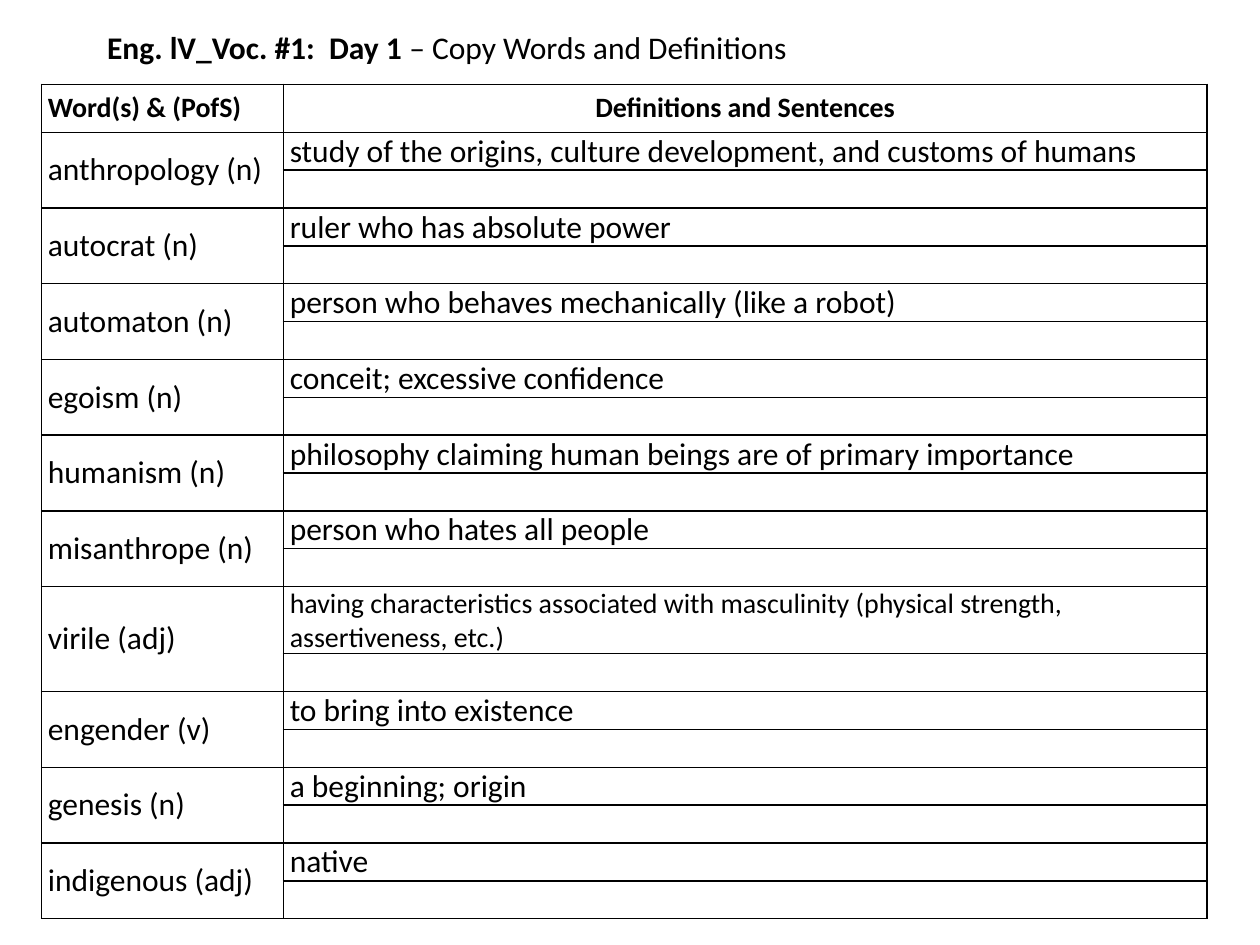
from lxml import etree
from pptx import Presentation, util as u
from pptx.dml.color import RGBColor
from pptx.enum import text
from pptx.oxml import ns

COLORS = {"ink": "000000"}
FONT = "Calibri"
WIDTH, HEIGHT = u.Inches(10), u.Inches(7.5)
HEADINGS = ("Word(s) & (PofS)", "Definitions and Sentences")
VOCABULARY = [
    ("anthropology (n)", "study of the origins, culture development, and customs of humans", 18),
    ("autocrat (n)", "ruler who has absolute power", 18),
    ("automaton (n)", "person who behaves mechanically (like a robot)", 18),
    ("egoism (n)", "conceit; excessive confidence", 18),
    ("humanism (n)", "philosophy claiming human beings are of primary importance", 18),
    ("misanthrope (n)", "person who hates all people", 18),
    ("virile (adj)", "having characteristics associated with masculinity "
     "(physical strength, assertiveness, etc.)", 16),
    ("engender (v)", "to bring into existence", 18),
    ("genesis (n)", "a beginning; origin", 18),
    ("indigenous (adj)", "native", 18),
]


def format_run(run, size, bold=False):
    """Apply the slide's typeface and ink to a run."""
    run.font.name = FONT
    run.font.size = u.Pt(size)
    run.font.bold = bold
    run.font.color.rgb = RGBColor.from_string(COLORS["ink"])


def add_borders(cell, width=1):
    """Draw a thin line on all four sides of a cell."""
    properties = cell._tc.get_or_add_tcPr()
    for position, side in enumerate(("lnL", "lnR", "lnT", "lnB")):
        line = etree.Element(ns.qn(f"a:{side}"), w=str(u.Pt(width)))
        fill = etree.SubElement(line, ns.qn("a:solidFill"))
        etree.SubElement(fill, ns.qn("a:srgbClr"), val=COLORS["ink"])
        properties.insert(position, line)


def style_cell(cell):
    """Give a cell its margins, anchor, borders and blank-line text size."""
    cell.margin_left = cell.margin_right = u.Inches(0.05)
    cell.margin_top = cell.margin_bottom = 0
    cell.vertical_anchor = text.MSO_ANCHOR.MIDDLE
    cell.fill.background()
    add_borders(cell)
    paragraph = cell.text_frame.paragraphs[0]
    if not paragraph.runs:
        ending = etree.SubElement(paragraph._p, ns.qn("a:endParaRPr"), sz="1800")
        etree.SubElement(ending, ns.qn("a:latin"), typeface=FONT)


def write_cell(cell, words, size, bold=False):
    """Put formatted words in a cell."""
    cell.text_frame.text = words
    format_run(cell.text_frame.paragraphs[0].runs[0], size, bold)


def add_heading(slide, left, top, width, height):
    """Place the title with a bold lesson name and a plain task."""
    title = slide.shapes.title
    title.left, title.top, title.width, title.height = left, top, width, height
    frame = title.text_frame
    frame.word_wrap = False
    frame.auto_size = text.MSO_AUTO_SIZE.SHAPE_TO_FIT_TEXT
    frame.vertical_anchor = text.MSO_ANCHOR.MIDDLE
    paragraph = frame.paragraphs[0]
    paragraph.alignment = text.PP_ALIGN.LEFT
    paragraph._p.get_or_add_pPr().set("indent", str(u.Inches(0.5)))
    for words, bold in (("Eng. lV_Voc. #1:  Day 1 ", True),
                        ("– Copy Words and Definitions", False)):
        run = paragraph.add_run()
        run.text = words
        format_run(run, 18, bold)


def add_vocabulary(slide, left, top, width, height):
    """Place the word table, with a blank sentence row under each definition."""
    count = 1 + 2 * len(VOCABULARY)
    table = slide.shapes.add_table(count, 2, left, top, width, height).table
    table.horz_banding = False
    table.columns[0].width = u.Inches(1.92)
    table.columns[1].width = width - table.columns[0].width
    for row in table.rows:
        row.height = u.Inches(0.3)
    table.rows[0].height = u.Inches(0.38)
    for column, heading in enumerate(HEADINGS):
        write_cell(table.cell(0, column), heading, 16, True)
    table.cell(0, 1).text_frame.paragraphs[0].alignment = text.PP_ALIGN.CENTER
    for index, (word, definition, size) in enumerate(VOCABULARY):
        row = 1 + 2 * index
        table.cell(row, 0).merge(table.cell(row + 1, 0))
        write_cell(table.cell(row, 0), word, 18)
        write_cell(table.cell(row, 1), definition, size)
    for cell in table.iter_cells():
        style_cell(cell)


def main():
    """Build the vocabulary slide."""
    presentation = Presentation()
    presentation.slide_width, presentation.slide_height = WIDTH, HEIGHT
    slide = presentation.slides.add_slide(presentation.slide_layouts[5])
    add_heading(slide, u.Inches(0.25), u.Inches(0.17), u.Inches(6.11), u.Inches(0.4))
    add_vocabulary(slide, u.Inches(0.33), u.Inches(0.67), u.Inches(9.25), u.Inches(6.67))
    presentation.save("out.pptx")


if __name__ == "__main__":
    main()
